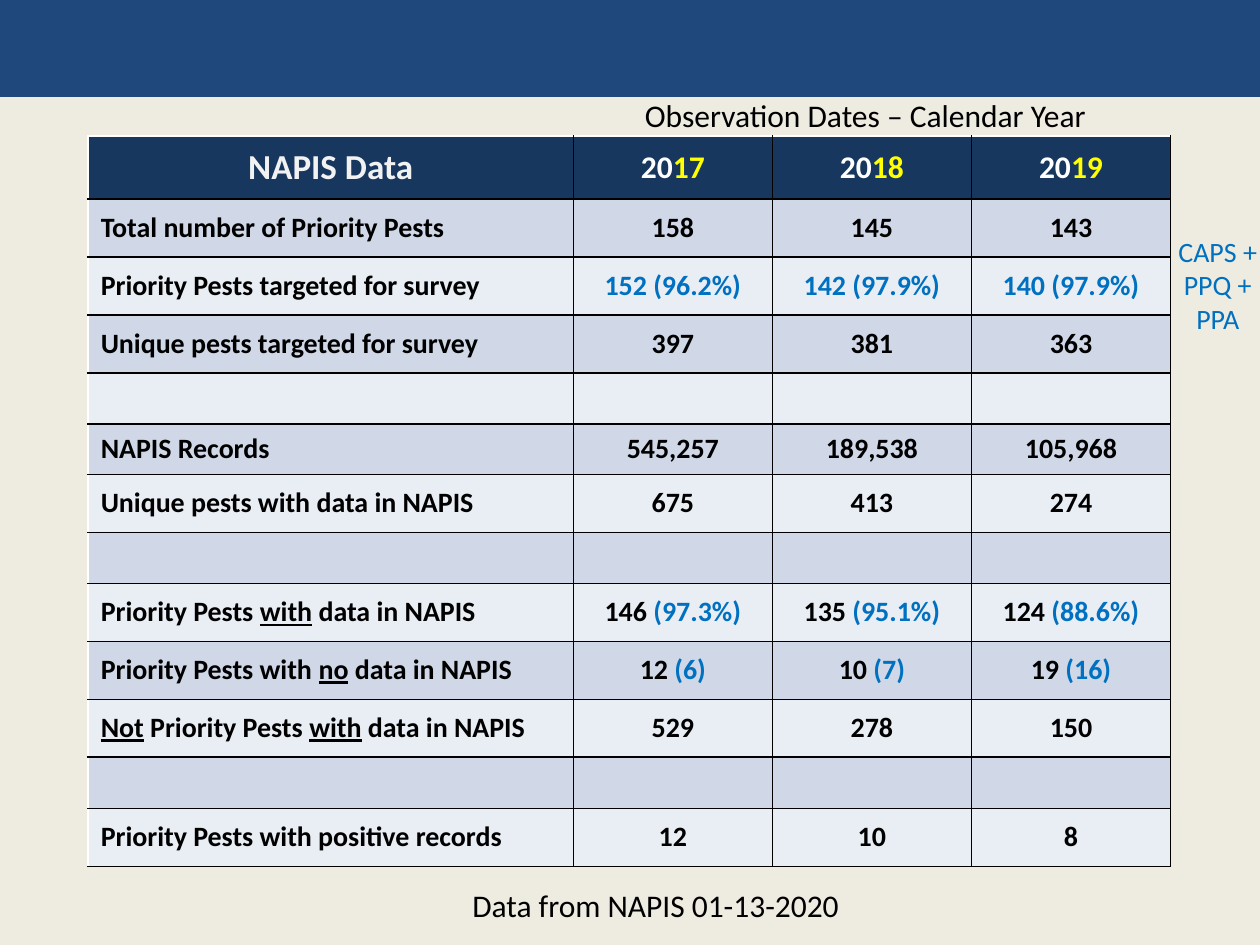
from pptx import Presentation
from pptx.dml.color import RGBColor as RGB
from pptx.enum.shapes import MSO_SHAPE as SHAPE
from pptx.enum.text import MSO_ANCHOR as ANCHOR, MSO_AUTO_SIZE as FIT, PP_ALIGN as ALIGN
from pptx.util import Inches, Pt
from lxml.etree import SubElement
from pptx.oxml.ns import qn

HUE = {
    "page": "EEECE1", "band": "1F497D", "head": "17375E", "dark": "D0D8E8",
    "light": "E9EDF4", "black": "000000", "white": "FFFFFF", "pale": "F2F2F2",
    "yellow": "FFFF00", "blue": "0070C0",
}


def add_run(para, text, size, hue, **style):
    run = para.add_run()
    run.text = text
    for key, value in {"name": "Calibri", "size": Pt(size), **style}.items():
        setattr(run.font, key, value)
    run.font.color.rgb = RGB.from_string(HUE[hue])


def add_edge(cell, side, hue):
    line = SubElement(cell._tc.get_or_add_tcPr(), qn(f"a:ln{side}"), w=str(Pt(1)))
    fill = SubElement(line, qn("a:solidFill"))
    SubElement(fill, qn("a:srgbClr"), val=HUE[hue])


deck = Presentation()
deck.slide_width, deck.slide_height = Inches(10), Inches(7.5)
slide = deck.slides.add_slide(deck.slide_layouts[6])
slide.background.fill.solid()
slide.background.fill.fore_color.rgb = RGB.from_string(HUE["page"])

band = slide.shapes.add_shape(SHAPE.RECTANGLE, 0, 0, Inches(10), Inches(0.77))
band.shadow.inherit = False
band.fill.solid()
band.fill.fore_color.rgb = RGB.from_string(HUE["band"])
band.line.fill.background()

# Text between asterisks is underlined in the first column, tinted in the others.
ROWS = [
    (0.5, "NAPIS Data", "20*17*", "20*18*", "20*19*"),
    (0.46, "Total number of Priority Pests", "158", "145", "143"),
    (0.46, "Priority Pests targeted for survey",
     "*152 (96.2%)*", "*142 (97.9%)*", "*140 (97.9%)*"),
    (0.46, "Unique pests targeted for survey", "397", "381", "363"),
    (0.4, "", "", "", ""),
    (0.4, "NAPIS Records", "545,257", "189,538", "105,968"),
    (0.46, "Unique pests with data in NAPIS", "675", "413", "274"),
    (0.3, "", "", "", ""),
    (0.46, "Priority Pests *with* data in NAPIS",
     "146 *(97.3%)*", "135 *(95.1%)*", "124* (88.6%)*"),
    (0.46, "Priority Pests with *no* data in NAPIS", "12 *(6)*", "10 *(7)*", "19* (16)*"),
    (0.46, "*Not* Priority Pests *with* data in NAPIS", "529", "278", "150"),
    (0.3, "", "", "", ""),
    (0.46, "Priority Pests with positive records", "12", "10", "8"),
]
WIDTHS = [3.85, 1.58, 1.58, 1.58]

frame = slide.shapes.add_table(
    len(ROWS), len(WIDTHS), Inches(0.7), Inches(1.08), Inches(8.6), Inches(5.81))
table = frame.table
table.first_row = table.horz_banding = False
for col, width in enumerate(WIDTHS):
    table.columns[col].width = Inches(width)

for row, (height, *texts) in enumerate(ROWS):
    table.rows[row].height = Inches(height)
    head = row == 0
    for col, text in enumerate(texts):
        cell = table.cell(row, col)
        label = col == 0
        edges = {"L": "white" if label else "black", "R": "black",
                 "T": "white" if head else "black", "B": "black"}
        for side, hue in edges.items():
            add_edge(cell, side, hue)
        cell.fill.solid()
        shade = "head" if head else "dark" if row % 2 else "light"
        cell.fill.fore_color.rgb = RGB.from_string(HUE[shade])
        cell.vertical_anchor = ANCHOR.MIDDLE
        para = cell.text_frame.paragraphs[0]
        para.alignment = ALIGN.CENTER if head or not label else ALIGN.LEFT
        size = (20 if label else 18) if head else 16
        plain = ("pale" if label else "white") if head else "black"
        tint = "yellow" if head else "blue"
        for spot, part in enumerate(text.split("*")):
            mark = spot % 2 == 1
            if part:
                add_run(para, part, size, tint if mark and not label else plain,
                        bold=True, underline=mark and label)
frame.height = Inches(5.81)

NOTES = [
    (3.65, 6.98, 3.14, 0.4, 18, "black", ALIGN.LEFT, ["Data from NAPIS 01-13-2020"]),
    (5.02, 0.71, 3.74, 0.4, 18, "black", ALIGN.LEFT,
     ["Observation Dates – Calendar Year"]),
    (9.25, 1.81, 0.83, 0.91, 16, "blue", ALIGN.CENTER, ["CAPS +", "PPQ +", "PPA"]),
]
for *place, size, hue, align, lines in NOTES:
    box = slide.shapes.add_textbox(*map(Inches, place)).text_frame
    box.word_wrap = False
    box.auto_size = FIT.SHAPE_TO_FIT_TEXT
    for spot, line in enumerate(lines):
        para = box.add_paragraph() if spot else box.paragraphs[0]
        para.alignment = align
        add_run(para, line, size, hue)

deck.save("out.pptx")
